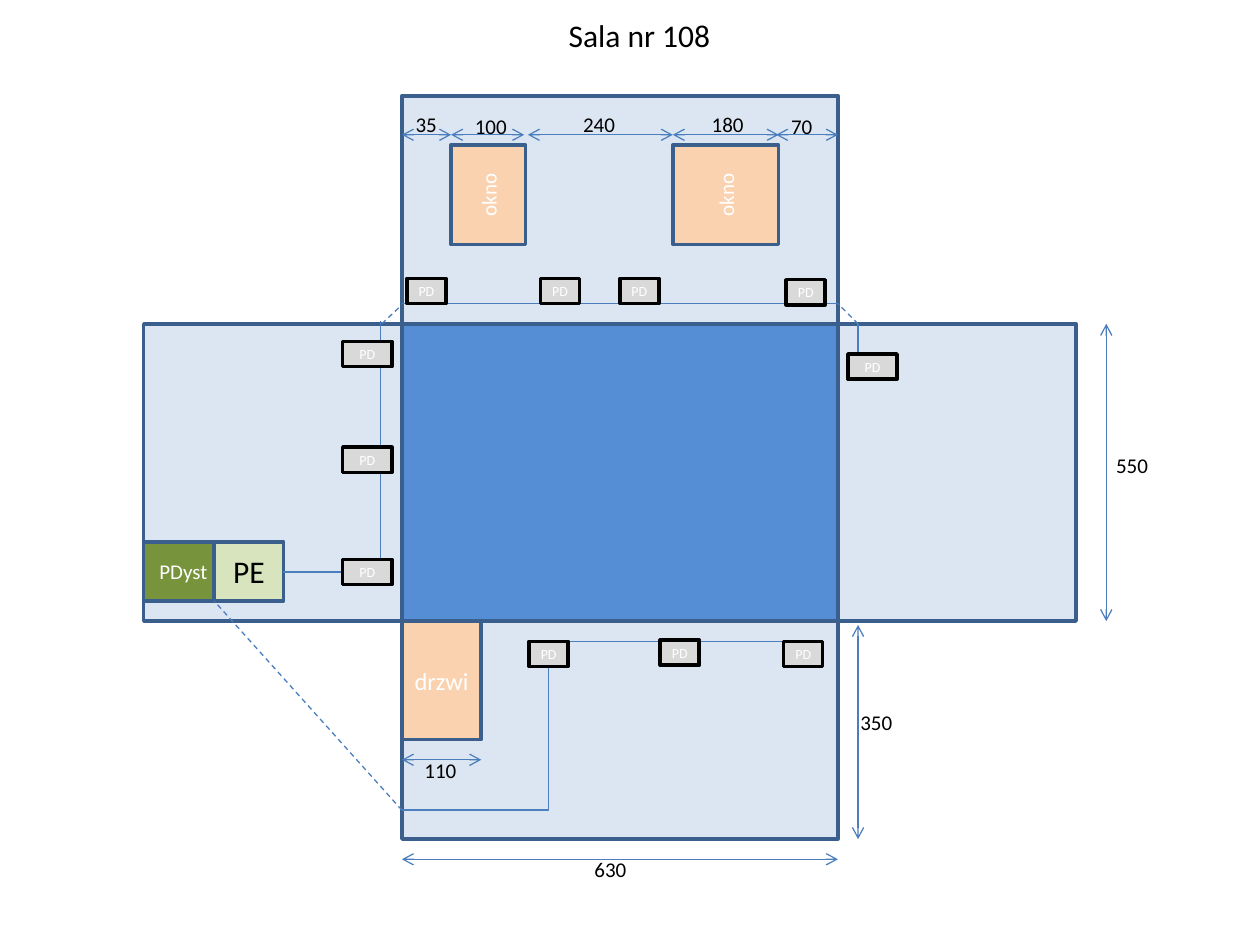
from dataclasses import dataclass

import lxml.etree
import pptx
import pptx.dml.color
import pptx.enum.dml
import pptx.enum.shapes
import pptx.enum.text
import pptx.oxml.ns
import pptx.shapes.connector
import pptx.slide
import pptx.text.text
import pptx.util

Inches = pptx.util.Inches
qn = pptx.oxml.ns.qn
KIND = pptx.enum.shapes.MSO_CONNECTOR
ALIGN = pptx.enum.text.PP_ALIGN
ANCHOR = pptx.enum.text.MSO_ANCHOR

# The gap fill is just dark enough for white text to read on it
HUES = {
    "floor": "558ED5", "wall": "DCE6F2", "edge": "3A5F8C", "gap": "FAD2B0",
    "dist": "77933C", "power": "D7E4BD", "plate": "D9D9D9", "cable": "4B7EBC",
    "black": "000000", "white": "FFFFFF",
}
# Edges of the room's floor
LEFT, RIGHT, TOP, BASE = 3.19, 6.65, 2.57, 4.93


@dataclass
class Box:
    x: float
    y: float
    w: float
    h: float
    fill: str
    text: str = ""
    size: float = 12
    ink: str = "white"
    edge: str = "edge"
    turn: bool = False


@dataclass
class Line:
    x1: float
    y1: float
    x2: float
    y2: float
    dash: bool = False
    heads: bool = False


@dataclass
class Label:
    x: float
    y: float
    text: str


def tint(name: str) -> pptx.dml.color.RGBColor:
    return pptx.dml.color.RGBColor.from_string(HUES[name])


def write(frame: pptx.text.text.TextFrame, text: str, *, size: float = 12,
          ink: str = "black", align: ALIGN = ALIGN.LEFT,
          anchor: ANCHOR = ANCHOR.TOP, inset: bool = True) -> None:
    frame.word_wrap = False
    frame.vertical_anchor = anchor
    if not inset:
        frame.margin_left = frame.margin_right = Inches(0)
        frame.margin_top = frame.margin_bottom = Inches(0)
    para = frame.paragraphs[0]
    para.alignment = align
    run = para.add_run()
    run.text = text
    run.font.name = "Calibri"
    run.font.size = pptx.util.Pt(size)
    run.font.color.rgb = tint(ink)


def draw_box(slide: pptx.slide.Slide, box: Box) -> None:
    shape = slide.shapes.add_shape(
        pptx.enum.shapes.MSO_SHAPE.RECTANGLE,
        Inches(box.x), Inches(box.y), Inches(box.w), Inches(box.h))
    shape.shadow.inherit = False
    shape.fill.solid()
    shape.fill.fore_color.rgb = tint(box.fill)
    shape.line.color.rgb = tint(box.edge)
    shape.line.width = pptx.util.Pt(2)
    if box.text:
        write(shape.text_frame, box.text, size=box.size, ink=box.ink,
              align=ALIGN.CENTER, anchor=ANCHOR.MIDDLE, inset=False)
    if box.turn:
        shape.text_frame._txBody.find(qn("a:bodyPr")).set("vert", "vert270")


def draw_line(slide: pptx.slide.Slide, line: Line,
              kind: KIND = KIND.STRAIGHT) -> pptx.shapes.connector.Connector:
    link = slide.shapes.add_connector(
        kind, Inches(line.x1), Inches(line.y1), Inches(line.x2), Inches(line.y2))
    link.line.color.rgb = tint("cable")
    link.line.width = pptx.util.Pt(0.75)
    if line.dash:
        link.line.dash_style = pptx.enum.dml.MSO_LINE.DASH
    props = link._element.spPr
    if line.heads:
        for end in ("a:headEnd", "a:tailEnd"):
            lxml.etree.SubElement(props.find(qn("a:ln")), qn(end), type="arrow")
    lxml.etree.SubElement(props, qn("a:effectLst"))
    return link


def draw_bends(slide: pptx.slide.Slide) -> None:
    """Draw the one-bend cable on the left wall and the two-bend one by the door."""
    side = draw_line(slide, Line(2.25, 4.54, 3.02, 2.55), KIND.ELBOW)
    side._element.spPr.find(qn("a:prstGeom")).set("prst", "bentConnector2")
    door = draw_line(slide, Line(LEFT, 6.43, 6.53, 5.09), KIND.ELBOW)
    guides = door._element.spPr.find(qn("a:prstGeom")).find(qn("a:avLst"))
    lxml.etree.SubElement(guides, qn("a:gd"), name="adj1", fmla="val 34800")


def draw_text(slide: pptx.slide.Slide, label: Label) -> None:
    area = slide.shapes.add_textbox(
        Inches(label.x), Inches(label.y), Inches(0.47), Inches(0.3))
    write(area.text_frame, label.text)


def plate(x: float, y: float, w: float = 0.31) -> Box:
    return Box(x, y, w, 0.2, "plate", "PD", 8, edge="black")


WIDE, HIGH = RIGHT - LEFT, BASE - TOP
ROOM = [
    Box(LEFT, TOP, WIDE, HIGH, "floor"),
    Box(LEFT, 0.76, WIDE, TOP - 0.76, "wall"),
    Box(LEFT, BASE, WIDE, 1.73, "wall"),
    Box(RIGHT, TOP, 1.89, HIGH, "wall"),
    Box(1.14, TOP, LEFT - 1.14, HIGH, "wall"),
    Box(LEFT, BASE, 0.63, 0.94, "gap", "drzwi", 14),
    Box(1.14, 4.3, 0.63, 0.47, "dist", "PDyst"),
    Box(1.7, 4.3, 0.55, 0.47, "power", "PE", 18, "black"),
    Box(3.58, 1.15, 0.59, 0.79, "gap", "okno", turn=True),
    Box(5.34, 1.15, 0.84, 0.79, "gap", "okno", turn=True),
]
CABLES = [
    Line(LEFT, 2.41, RIGHT, 2.41),
    Line(6.81, TOP, 6.81, 2.81),
    Line(3.03, TOP, LEFT, 2.42, dash=True),
    Line(6.81, TOP, RIGHT, 2.41, dash=True),
    Line(LEFT, 6.43, 1.7, 4.77, dash=True),
]
PLATES = [plate(2.72, y, 0.39) for y in (4.44, 3.55, 2.71)]
PLATES += [plate(6.73, 2.81, 0.39)]
PLATES += [plate(x, y) for x, y in (
    (3.23, 2.21), (4.29, 2.21), (4.92, 2.21), (6.24, 2.22),
    (4.2, 5.09), (5.24, 5.08), (6.22, 5.09))]
SPANS = [Line(a, 1.07, b, 1.07, heads=True) for a, b in (
    (LEFT, 3.58), (3.58, 4.16), (4.19, 5.34), (5.34, 6.18), (6.16, RIGHT))]
SPANS += [
    Line(LEFT, 6.82, RIGHT, 6.82, heads=True),
    Line(LEFT, 6.03, 3.82, 6.03, heads=True),
    Line(8.78, TOP, 8.78, BASE, heads=True),
    Line(6.81, 4.96, 6.81, 6.66, heads=True),
]
LABELS = [
    Label(3.2, 0.84, "35"), Label(3.67, 0.85, "100"), Label(4.53, 0.84, "240"),
    Label(5.55, 0.84, "180"), Label(6.18, 0.85, "70"), Label(4.62, 6.75, "630"),
    Label(3.27, 5.96, "110"), Label(8.76, 3.54, "550"), Label(6.73, 5.58, "350"),
]


def main() -> None:
    deck = pptx.Presentation()
    deck.slide_width, deck.slide_height = Inches(10), Inches(7.5)
    slide = deck.slides.add_slide(deck.slide_layouts[6])
    title = slide.shapes.add_textbox(
        Inches(4.05), Inches(0.12), Inches(2.05), Inches(0.32))
    write(title.text_frame, "Sala nr 108", size=18, align=ALIGN.CENTER,
          anchor=ANCHOR.MIDDLE)
    for box in ROOM:
        draw_box(slide, box)
    draw_bends(slide)
    for line in CABLES:
        draw_line(slide, line)
    for box in PLATES:
        draw_box(slide, box)
    for line in SPANS:
        draw_line(slide, line)
    for label in LABELS:
        draw_text(slide, label)
    deck.save("out.pptx")


if __name__ == "__main__":
    main()
